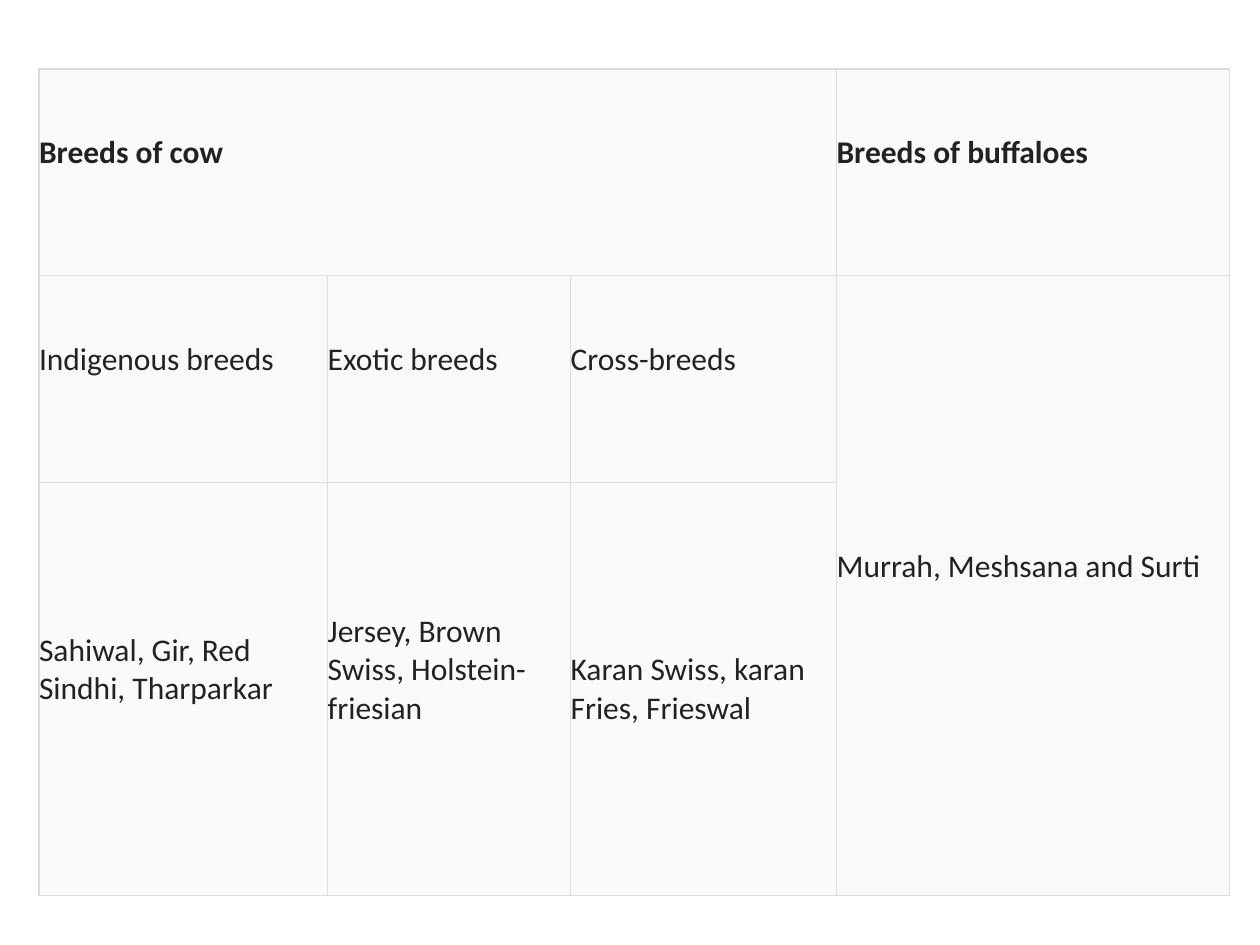
from dataclasses import dataclass

from lxml import etree
from pptx import Presentation
from pptx.dml.color import RGBColor
from pptx.enum.text import MSO_ANCHOR
from pptx.oxml.ns import qn
from pptx.table import Table, _Cell
from pptx.util import Pt

MIDDLE = MSO_ANCHOR.MIDDLE
BLANK = 6


@dataclass(frozen=True)
class Theme:
    font: str = "Calibri"
    size: float = 18
    line: float = 22
    ink: str = "222222"
    rule: str = "DDDDDD"
    light: str = "FAFAFA"
    dark: str = "F9F9F9"
    stroke: float = 0.75


@dataclass(frozen=True)
class Entry:
    row: int
    col: int
    text: str
    fill: str
    rows: int = 1
    cols: int = 1
    bold: bool = False
    lift: bool = True


THEME = Theme()
LEFT, TOP = 22.3, 39.4
WIDTHS = (165, 138.8, 152, 224.7)
HEIGHTS = (118.2, 118.2, 236.2)

ENTRIES = (
    Entry(0, 0, "Breeds of cow", THEME.light, cols=3, bold=True),
    Entry(0, 3, "Breeds of buffaloes", THEME.light, bold=True),
    Entry(1, 0, "Indigenous breeds", THEME.dark),
    Entry(1, 1, "Exotic breeds", THEME.dark),
    Entry(1, 2, "Cross-breeds", THEME.dark),
    Entry(1, 3, "Murrah, Meshsana and Surti", THEME.dark, rows=2),
    Entry(2, 0, "Sahiwal, Gir, Red Sindhi, Tharparkar", THEME.light),
    Entry(2, 1, "Jersey, Brown Swiss, Holstein-friesian", THEME.light),
    Entry(2, 2, "Karan Swiss, karan Fries, Frieswal", THEME.light, lift=False),
)


def assign(target: object, values: dict) -> None:
    for name, value in values.items():
        setattr(target, name, value)


def add_rules(cell: _Cell) -> None:
    """Border all four sides; call before the fill, which must follow in the XML."""
    props = cell._tc.get_or_add_tcPr()
    for side in ("lnL", "lnR", "lnT", "lnB"):
        line = etree.SubElement(props, qn(f"a:{side}"), w=str(Pt(THEME.stroke)))
        solid = etree.SubElement(line, qn("a:solidFill"))
        etree.SubElement(solid, qn("a:srgbClr"), val=THEME.rule)


def fill_cell(table: Table, entry: Entry) -> None:
    """Write one entry; a lifted one sits half a line above the middle."""
    cell = table.cell(entry.row, entry.col)
    if entry.rows * entry.cols > 1:
        last = (entry.row + entry.rows - 1, entry.col + entry.cols - 1)
        cell.merge(table.cell(*last))
    cell.fill.solid()
    cell.fill.fore_color.rgb = RGBColor.from_string(entry.fill)
    assign(cell, {
        "text": entry.text,
        "vertical_anchor": MIDDLE,
        "margin_left": 0,
        "margin_right": 0,
        "margin_top": 0,
        "margin_bottom": Pt(THEME.line if entry.lift else 0),
    })
    font = cell.text_frame.paragraphs[0].runs[0].font
    assign(font, {"name": THEME.font, "size": Pt(THEME.size), "bold": entry.bold})
    font.color.rgb = RGBColor.from_string(THEME.ink)


def main() -> None:
    deck = Presentation()
    assign(deck, {"slide_width": Pt(720), "slide_height": Pt(540)})
    slide = deck.slides.add_slide(deck.slide_layouts[BLANK])
    table = slide.shapes.add_table(
        len(HEIGHTS), len(WIDTHS), Pt(LEFT), Pt(TOP),
        Pt(sum(WIDTHS)), Pt(sum(HEIGHTS)),
    ).table
    assign(table, {"first_row": False, "horz_banding": False})
    for col, width in zip(table.columns, WIDTHS):
        col.width = Pt(width)
    for row, height in zip(table.rows, HEIGHTS):
        row.height = Pt(height)
    for cell in table.iter_cells():
        add_rules(cell)
    for entry in ENTRIES:
        fill_cell(table, entry)
    deck.save("out.pptx")


if __name__ == "__main__":
    main()
